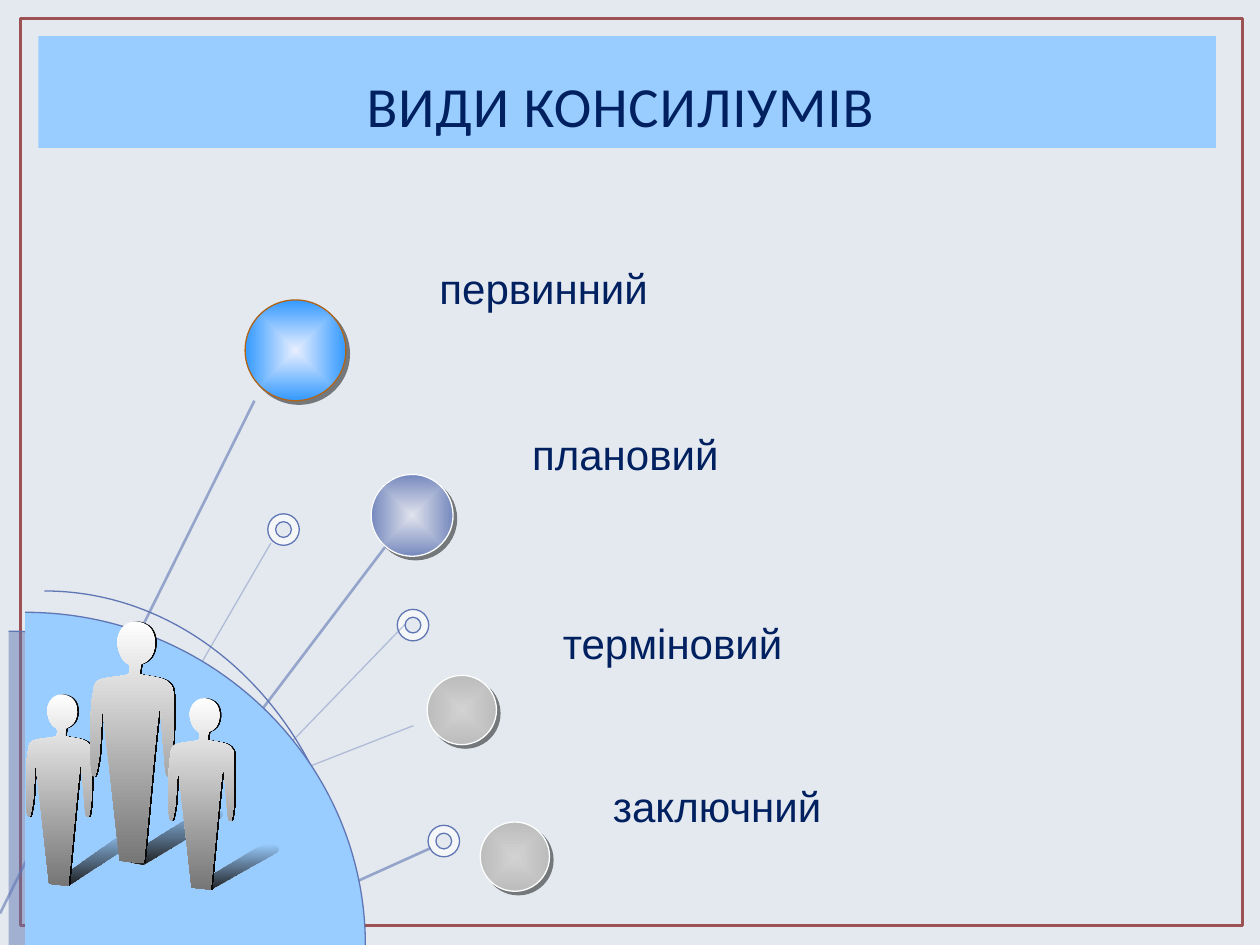
from copy import deepcopy
from lxml.etree import SubElement
from pptx import Presentation
from pptx.dml.color import RGBColor
from pptx.enum.shapes import MSO_CONNECTOR as CONNECTOR, MSO_SHAPE as SHAPE
from pptx.enum.text import MSO_ANCHOR as ANCHOR, PP_ALIGN as ALIGN
from pptx.oxml.ns import qn
from pptx.util import Pt

BACKGROUND = RGBColor(0xE4, 0xE9, 0xEF)
FRAME = RGBColor(0x9C, 0x52, 0x52)
SKY = RGBColor(0x99, 0xCC, 0xFF)
NAVY = RGBColor(0x00, 0x20, 0x60)
INDIGO = RGBColor(0x60, 0x76, 0xB4)
WHITE = RGBColor(0xFF, 0xFF, 0xFF)
GREY = RGBColor(0x76, 0x76, 0x76)
BLACK = RGBColor(0x18, 0x18, 0x18)
SOFT_BLACK = RGBColor(0x1C, 0x1C, 0x1C)
RIM = RGBColor(0xFE, 0xFF, 0xFF)
ORANGE = RGBColor(0xB2, 0x63, 0x14)
BLUE_BALL = (RGBColor(0xE8, 0xEF, 0xFF), RGBColor(0x33, 0x99, 0xFF))
INDIGO_BALL = (RGBColor(0xE0, 0xE3, 0xED), INDIGO)
GREY_BALL = (RGBColor(0xD2, 0xD2, 0xD2), RGBColor(0xB2, 0xB2, 0xB2))

TITLE = "ВИДИ КОНСИЛІУМІВ "
# text, left, top, width, alignment
LABELS = [
    ("первинний", 226.8, 146.2, 167.8, ALIGN.CENTER),
    ("плановий", 297, 241.2, 149, ALIGN.LEFT),
    ("терміновий", 314.6, 349.2, 175.7, ALIGN.LEFT),
    ("заключний", 322, 442.6, 175.7, ALIGN.CENTER),
]
# left, top, diameter, rotation, gradient, rim
BALLS = [
    (140.1, 171.4, 57.6, 0, BLUE_BALL, ORANGE),
    (212.1, 271.1, 46.8, 13.4, INDIGO_BALL, RIM),
    (244.1, 385.9, 39.6, 51.9, GREY_BALL, RIM),
    (274.4, 469.7, 39.6, 51.9, GREY_BALL, RIM),
]
RING_SIZE = 18
RINGS = [(153, 293.6), (227, 348.2), (244.6, 471.6)]
# outer end, inner end
THIN_SPOKES = [((154.8, 310.3), (23.8, 536.4)), ((236.2, 414.7), (23, 498.2)),
               ((231.8, 356.4), (32.4, 563))]
THICK_SPOKES = [((145.4, 229), (0, 522)), ((221.8, 310.3), (39.6, 550.8)),
                ((246.2, 484.6), (8.6, 591.8))]
# left, top, width, height
OUTER_ARC = (25.4, 337.7, 176.8, 202.3)
PALE_SECTOR = (5, 360.7, 197.3, 198)
SKY_SECTOR = (14.4, 349.9, 194.4, 190.1)

# Outlines: two numbers are a point, six are a Bezier curve to the last point
PERSON = [
    (31, 34), (26, 32, 23, 25, 22, 17), (22, 9, 27, 0, 37, 0),
    (46, 1, 52, 6, 52, 18), (51, 29, 46, 32, 41, 34), (40, 37, 40, 40, 40, 42),
    (46, 44, 59, 44, 63, 49), (68, 53, 66, 59, 67, 69), (66, 108),
    (65, 117, 64, 124, 63, 123), (60, 125, 60, 113, 59, 104), (56, 68),
    (55, 69, 53, 88, 51, 108), (43, 192), (24, 190), (15, 109),
    (12, 86, 11, 71, 10, 70), (8, 104), (7, 113, 5, 123, 4, 123),
    (1, 123, 1, 113, 1, 103), (0, 93, 1, 71, 2, 62), (4, 53, 2, 51, 7, 47),
    (12, 44, 27, 44, 31, 42), (32, 40, 33, 36, 31, 34),
]
TALL, SHORT = 0.72, 0.57
PEOPLE = [(14.4, 396.7, SHORT), (51.1, 355, TALL), (95.8, 398.9, SHORT)]
GROUND_SHADOWS = [
    (28.8, 473, [(0, 44), (14, 46), (71, 9), (80, 1, 72, 2, 69, 2),
                 (66, 2, 65, 0, 53, 7), (0, 44)]),
    (68.4, 460.8, [(0, 42), (19, 46), (79, 10), (87, 3, 74, 1, 70, 0),
                   (67, 0, 66, 1, 55, 8), (0, 42)]),
    (109.4, 481, [(0, 35), (15, 38), (67, 9), (73, 3, 63, 0, 52, 4), (0, 35)]),
]


def set_alpha(color_parent, percent):
    color = next(color_parent.iter(qn("a:srgbClr")))
    SubElement(color, qn("a:alpha"), val=str(percent * 1000))


def paint(shape, fill=None, line=None, width=0.75, alpha=None):
    shape.shadow.inherit = False
    if fill is None:
        shape.fill.background()
    else:
        shape.fill.solid()
        shape.fill.fore_color.rgb = fill
        if alpha is not None:
            set_alpha(shape._element.spPr.find(qn("a:solidFill")), alpha)
    if line is None:
        shape.line.fill.background()
    else:
        shape.line.color.rgb = line
        shape.line.width = Pt(width)


def paint_gradient(shape, colors, from_center=False, first_alpha=None):
    shape.fill.gradient()
    for stop, color in zip(shape.fill.gradient_stops, colors):
        stop.color.rgb = color
    shape.fill.gradient_angle = 270
    gradient = shape._element.spPr.find(qn("a:gradFill"))
    if first_alpha is not None:
        set_alpha(gradient, first_alpha)
    if from_center:
        linear = gradient.find(qn("a:lin"))
        center = SubElement(gradient, qn("a:path"), path="shape")
        SubElement(center, qn("a:fillToRect"), l="50000", t="50000", r="50000", b="50000")
        gradient.replace(linear, center)


def cast_shadow(shape, distance, angle, alpha):
    effects = shape._element.spPr.find(qn("a:effectLst"))
    shadow = SubElement(effects, qn("a:outerShdw"), dist=str(Pt(distance)),
                        dir=str(angle * 60000), algn="ctr", rotWithShape="0")
    SubElement(shadow, qn("a:srgbClr"), val="080808")
    set_alpha(shadow, alpha)


def add_preset(slide, kind, left, top, width, height):
    return slide.shapes.add_shape(kind, Pt(left), Pt(top), Pt(width), Pt(height))


def add_outline(slide, outline, left, top, scale=1):
    """Build a closed freeform, then join each curve's three points into a Bezier."""
    points = [(Pt(left + segment[i] * scale), Pt(top + segment[i + 1] * scale))
              for segment in outline for i in range(0, len(segment), 2)]
    builder = slide.shapes.build_freeform(*points[0])
    builder.add_line_segments(points[1:], close=True)
    shape = builder.convert_to_shape()
    lines = iter(list(shape._element.iter(qn("a:lnTo"))))
    for segment in outline[1:]:
        first = next(lines)
        if len(segment) == 6:
            first.tag = qn("a:cubicBezTo")
            for line in (next(lines), next(lines)):
                first.append(line[0])
                line.getparent().remove(line)
    return shape


def add_sector(slide, left, top, width, height, fill=None, alpha=None):
    """Draw a quarter ellipse with a line along its arc only."""
    k = 0.55
    outline = [(0, 0), (width * k, 0, width, height * (1 - k), width, height), (0, height)]
    sector = add_outline(slide, outline, left, top)
    area = next(sector._element.iter(qn("a:path")))
    arc = deepcopy(area)
    for straight_edge in arc[2:]:
        arc.remove(straight_edge)
    arc.set("fill", "none")
    area.set("stroke", "0")
    area.addprevious(arc)
    paint(sector, fill, INDIGO, alpha=alpha)


def add_spokes(slide, spokes, width, alpha):
    for start, end in spokes:
        spoke = slide.shapes.add_connector(CONNECTOR.STRAIGHT, *map(Pt, start + end))
        spoke.line.color.rgb = INDIGO
        spoke.line.width = Pt(width)
        set_alpha(spoke._element.spPr, alpha)
        SubElement(spoke._element.spPr, qn("a:effectLst"))


def write(shape, text, font, size, alignment):
    shape.text_frame.word_wrap = True
    paragraph = shape.text_frame.paragraphs[0]
    paragraph.alignment = alignment
    run = paragraph.add_run()
    run.text = text
    run.font.name, run.font.size = font, Pt(size)
    run.font.color.rgb = NAVY
    return run


def main():
    presentation = Presentation()
    presentation.slide_width, presentation.slide_height = Pt(720), Pt(540)
    slide = presentation.slides.add_slide(presentation.slide_layouts[6])
    slide.background.fill.solid()
    slide.background.fill.fore_color.rgb = BACKGROUND

    paint(add_preset(slide, SHAPE.RECTANGLE, 11.7, 10.5, 698.4, 518.4), line=FRAME, width=1.5)
    add_sector(slide, *OUTER_ARC)
    for left, top in RINGS:
        paint(add_preset(slide, SHAPE.DONUT, left, top, RING_SIZE, RING_SIZE),
              WHITE, INDIGO, alpha=60)
    add_spokes(slide, THIN_SPOKES, 0.75, 40)
    add_spokes(slide, THICK_SPOKES, 1.5, 60)
    add_sector(slide, *PALE_SECTOR, INDIGO, 50)
    add_sector(slide, *SKY_SECTOR, SKY)

    for text, left, top, width, alignment in LABELS:
        label = slide.shapes.add_textbox(Pt(left), Pt(top), Pt(width), Pt(36))
        write(label, text, "Arial", 24, alignment)
    for left, top, size, rotation, colors, rim in BALLS:
        ball = add_preset(slide, SHAPE.OVAL, left, top, size, size)
        ball.rotation = rotation
        paint(ball, line=rim)
        paint_gradient(ball, colors, from_center=True)
        cast_shadow(ball, 2.8, 45, 50)

    title = add_preset(slide, SHAPE.RECTANGLE, 21.9, 20.6, 673, 63.9)
    paint(title, SKY)
    title.text_frame.vertical_anchor = ANCHOR.BOTTOM
    title.text_frame.margin_bottom = Pt(5)
    run = write(title, TITLE, "Calibri", 32.4, ALIGN.CENTER)
    run.font._element.set("spc", "50")

    for left, top, outline in GROUND_SHADOWS:
        shadow = add_outline(slide, outline, left, top, TALL)
        paint(shadow)
        paint_gradient(shadow, (BLACK, SOFT_BLACK), first_alpha=0)
    for left, top, scale in PEOPLE:
        person = add_outline(slide, PERSON, left, top, scale)
        paint(person)
        paint_gradient(person, (WHITE, GREY))
        cast_shadow(person, 1, 0, 100)
    presentation.save("out.pptx")


if __name__ == "__main__":
    main()
